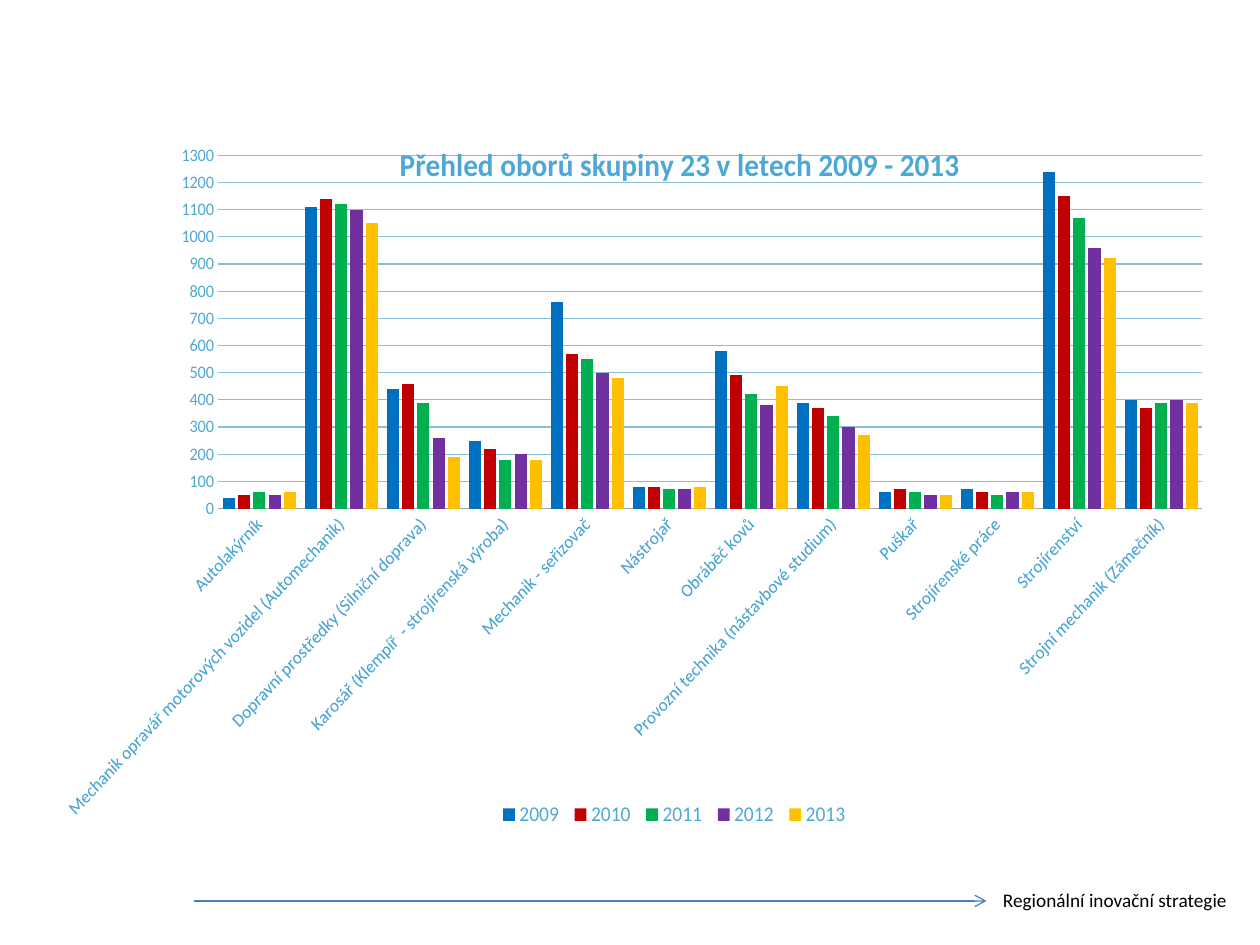
from lxml import etree
from pptx import Presentation
from pptx.chart.data import CategoryChartData
from pptx.dml.color import RGBColor
from pptx.enum.chart import XL_CHART_TYPE, XL_LEGEND_POSITION, XL_TICK_MARK
from pptx.enum.shapes import MSO_CONNECTOR
from pptx.enum.text import MSO_AUTO_SIZE
from pptx.oxml.ns import qn
from pptx.util import Inches, Pt

CLUSTERED = XL_CHART_TYPE.COLUMN_CLUSTERED
LEGEND_BOTTOM = XL_LEGEND_POSITION.BOTTOM
NO_TICK = XL_TICK_MARK.NONE
STRAIGHT = MSO_CONNECTOR.STRAIGHT
FIT_SHAPE = MSO_AUTO_SIZE.SHAPE_TO_FIT_TEXT

BLACK = RGBColor(0x00, 0x00, 0x00)
ARROW_BLUE = RGBColor(0x4B, 0x7E, 0xBC)
TEXT_BLUE = RGBColor(0x4E, 0xA8, 0xD4)
GRID_BLUE = RGBColor(0x8A, 0xBD, 0xD8)
AXIS_GREY = RGBColor(0xA6, 0xA6, 0xA6)

CATEGORIES = [
    "Autolakýrník",
    "Mechanik opravář motorových vozidel (Automechanik)",
    "Dopravní prostředky (Silniční doprava)",
    "Karosář (Klempíř  - strojírenská výroba)",
    "Mechanik - seřizovač",
    "Nástrojař",
    "Obráběč kovů",
    "Provozní technika (nástavbové studium)",
    "Puškař",
    "Strojírenské práce",
    "Strojírenství",
    "Strojní mechanik (Zámečník)",
]
# Year, colour, pupils in each field
SERIES = [
    ("2009", RGBColor(0x00, 0x70, 0xC0),
     [40, 1110, 440, 250, 760, 80, 580, 390, 60, 70, 1240, 400]),
    ("2010", RGBColor(0xC0, 0x00, 0x00),
     [50, 1140, 460, 220, 570, 80, 490, 370, 70, 60, 1150, 370]),
    ("2011", RGBColor(0x00, 0xB0, 0x50),
     [60, 1120, 390, 180, 550, 70, 420, 340, 60, 50, 1070, 390]),
    ("2012", RGBColor(0x70, 0x30, 0xA0),
     [50, 1100, 260, 200, 500, 70, 380, 300, 50, 60, 960, 400]),
    ("2013", RGBColor(0xFF, 0xC0, 0x00),
     [60, 1050, 190, 180, 480, 80, 450, 270, 50, 60, 920, 390]),
]


def set_layout(parent, index, inner=False, **fractions):
    """Place a chart part by fractions of the chart area."""
    for old in parent.findall(qn("c:layout")):
        parent.remove(old)
    layout = etree.Element(qn("c:layout"))
    manual = etree.SubElement(layout, qn("c:manualLayout"))
    settings = [("layoutTarget", "inner")] if inner else []
    settings += [("xMode", "edge"), ("yMode", "edge"), *fractions.items()]
    for tag, value in settings:
        etree.SubElement(manual, qn(f"c:{tag}")).set("val", str(value))
    parent.insert(index, layout)


class SlideBuilder:
    font = "Calibri"

    def __init__(self, slide):
        self.slide = slide

    def style(self, font, size, color, bold=False):
        font.name = self.font
        font.size = Pt(size)
        font.bold = bold
        font.color.rgb = color

    def text(self, x, y, w, h, text, size, color):
        sp = self.slide.shapes.add_textbox(Inches(x), Inches(y), Inches(w), Inches(h))
        tf = sp.text_frame
        tf.word_wrap = True
        tf.auto_size = FIT_SHAPE
        tf.margin_left = tf.margin_right = tf.margin_top = tf.margin_bottom = 0
        r = tf.paragraphs[0].add_run()
        r.text = text
        self.style(r.font, size, color)

    def arrow(self, x1, y1, x2, y2, color, width):
        line = self.slide.shapes.add_connector(
            STRAIGHT, Inches(x1), Inches(y1), Inches(x2), Inches(y2))
        line.line.color.rgb = color
        line.line.width = Pt(width)
        sp_pr = line._element.spPr
        etree.SubElement(sp_pr.find(qn("a:ln")), qn("a:tailEnd")).set("type", "arrow")
        etree.SubElement(sp_pr, qn("a:effectLst"))

    def column_chart(self, x, y, w, h, title):
        data = CategoryChartData()
        data.categories = CATEGORIES
        for name, _, values in SERIES:
            data.add_series(name, values)
        chart = self.slide.shapes.add_chart(
            CLUSTERED, Inches(x), Inches(y), Inches(w), Inches(h), data).chart
        self.style(chart.font, 10, TEXT_BLUE)

        # Columns
        plot = chart.plots[0]
        plot.gap_width = 75
        plot.overlap = -25
        plot.vary_by_categories = False
        for series, (_, color, _) in zip(plot.series, SERIES):
            series.format.fill.solid()
            series.format.fill.fore_color.rgb = color
        plot_area = chart._chartSpace.chart.plotArea
        set_layout(plot_area, 0, inner=True, x=0.07, y=0.068, w=0.928, h=0.486)

        # Title
        chart.has_title = True
        r = chart.chart_title.text_frame.paragraphs[0].add_run()
        r.text = title
        self.style(r.font, 18, TEXT_BLUE, bold=True)
        set_layout(chart.chart_title._element, 1, x=0.236, y=0.043)

        # Axes
        cat = chart.category_axis
        cat.major_tick_mark = cat.minor_tick_mark = NO_TICK
        cat.format.line.color.rgb = AXIS_GREY
        self.style(cat.tick_labels.font, 10.5, TEXT_BLUE)
        cat._element.find(qn("c:txPr")).find(qn("a:bodyPr")).set("rot", "-2700000")
        val = chart.value_axis
        val.minimum_scale, val.maximum_scale, val.major_unit = 0, 1300, 100
        val.major_tick_mark = val.minor_tick_mark = NO_TICK
        val.format.line.fill.background()
        val.has_major_gridlines = True
        val.major_gridlines.format.line.color.rgb = GRID_BLUE
        val.major_gridlines.format.line.width = Pt(0.75)

        # Legend
        chart.has_legend = True
        legend = chart.legend
        legend.position = LEGEND_BOTTOM
        legend.include_in_layout = False
        self.style(legend.font, 12, TEXT_BLUE)
        set_layout(legend._element, 1, x=0.33, y=0.95, w=0.34, h=0.05)


def main():
    prs = Presentation()
    prs.slide_width, prs.slide_height = Inches(10), Inches(7.5)
    s = SlideBuilder(prs.slides.add_slide(prs.slide_layouts[6]))

    # Footer
    s.arrow(1.54, 7.15, 7.83, 7.15, ARROW_BLUE, 0.75)
    s.text(7.96, 7.05, 1.81, 0.19, "Regionální inovační strategie", 11, BLACK)

    # Chart of fields of study
    s.column_chart(0.51, 0.84, 9.05, 5.77,
                   "Přehled oborů skupiny 23 v letech 2009 - 2013")

    prs.save("out.pptx")


if __name__ == "__main__":
    main()
